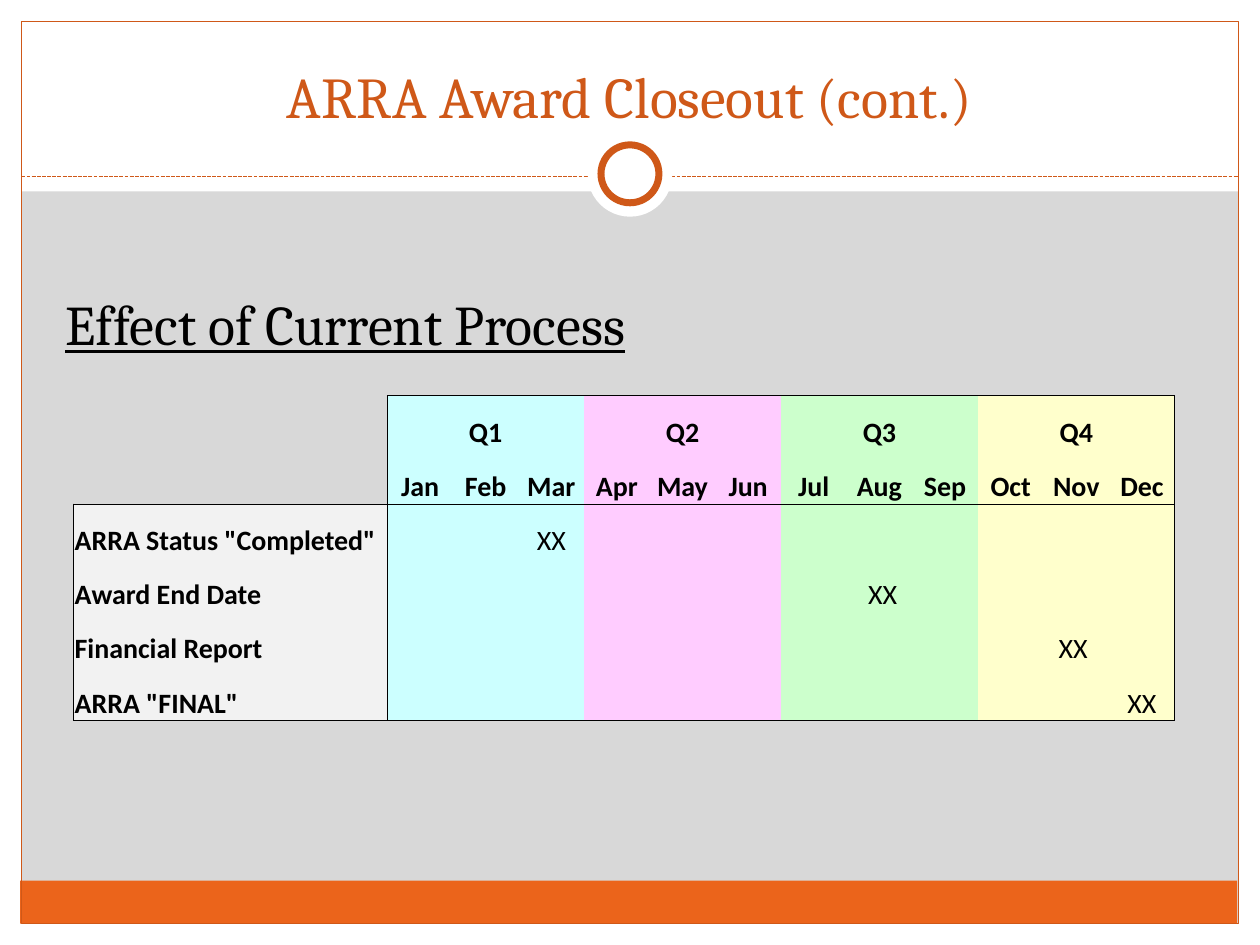
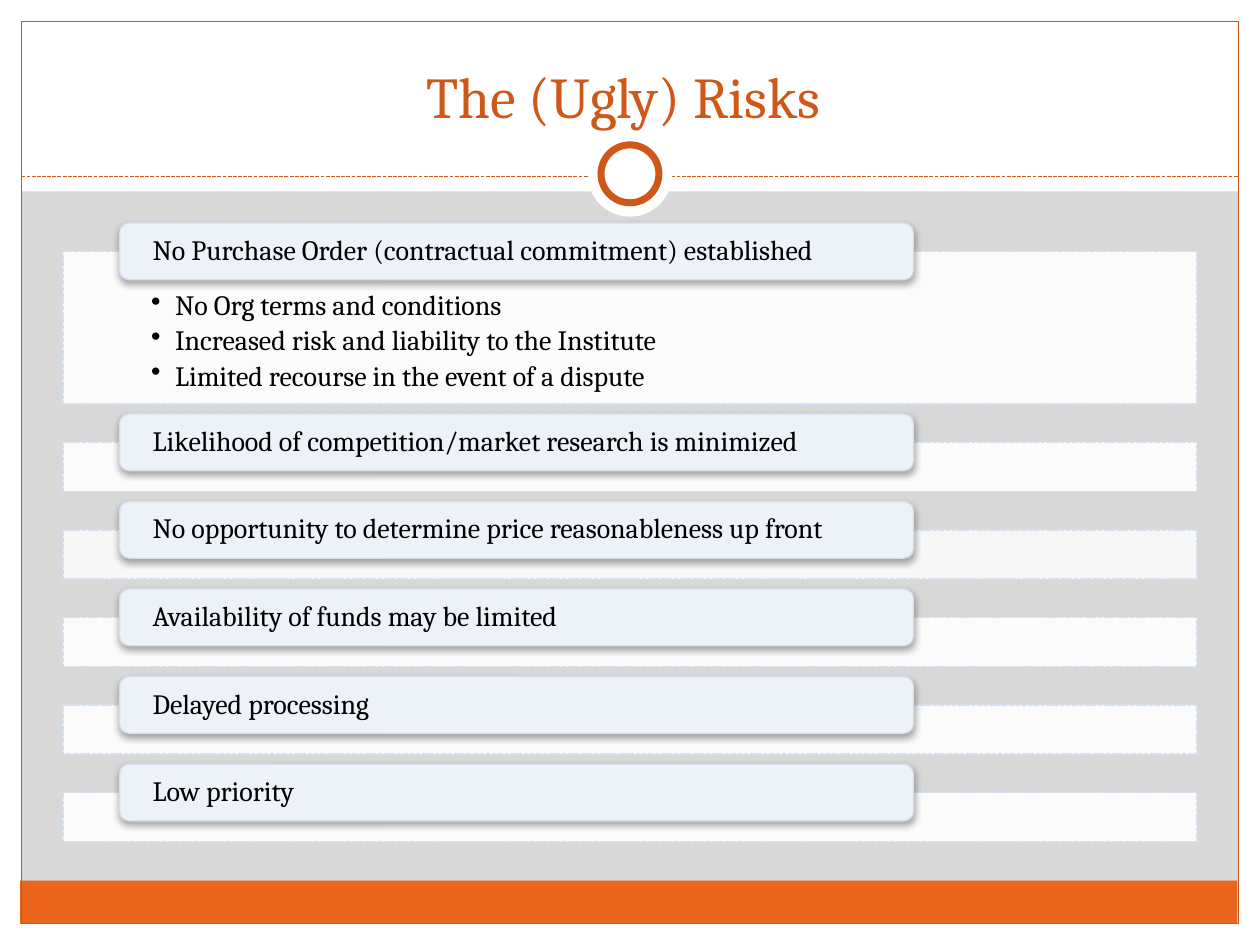
from lxml import etree
from pptx import Presentation
from pptx.dml.color import RGBColor
from pptx.enum.dml import MSO_LINE
from pptx.enum.shapes import MSO_CONNECTOR, MSO_SHAPE
from pptx.enum.text import MSO_ANCHOR, PP_ALIGN
from pptx.oxml.ns import qn
from pptx.util import Inches, Pt

RECTANGLE, ELLIPSE = MSO_SHAPE.RECTANGLE, MSO_SHAPE.OVAL
ROUNDED, STRAIGHT = MSO_SHAPE.ROUNDED_RECTANGLE, MSO_CONNECTOR.STRAIGHT
DASHED = MSO_LINE.SQUARE_DOT
TOP, MIDDLE, BOTTOM = MSO_ANCHOR.TOP, MSO_ANCHOR.MIDDLE, MSO_ANCHOR.BOTTOM
LEFT, CENTER = PP_ALIGN.LEFT, PP_ALIGN.CENTER

BLACK = RGBColor(0x00, 0x00, 0x00)
WHITE = RGBColor(0xFF, 0xFF, 0xFF)
GREY = RGBColor(0xD8, 0xD8, 0xD8)
PALE_GREY = RGBColor(0xF2, 0xF2, 0xF2)
PANEL_GREY = RGBColor(0xF7, 0xF7, 0xF7)
ORANGE = RGBColor(0xEB, 0x64, 0x1B)
RUST = RGBColor(0xCF, 0x58, 0x18)
PALE_BLUE = RGBColor(0xED, 0xF1, 0xF8)
EDGE_BLUE = RGBColor(0xD3, 0xDF, 0xEF)
QUARTER_FILLS = [
    RGBColor(0xCC, 0xFF, 0xFF),
    RGBColor(0xFF, 0xCC, 0xFF),
    RGBColor(0xCC, 0xFF, 0xCC),
    RGBColor(0xFF, 0xFF, 0xCC),
]

deck = Presentation()
deck.slide_width, deck.slide_height = Inches(10), Inches(7.5)
COLUMN = deck.slide_width / 100
ROW = deck.slide_height / 75


def place(page, kind, area, fill=None, line=None, weight=0.75):
    left, top, width, height = area
    box = page.shapes.add_shape(
        kind, int(left * COLUMN), int(top * ROW), int(width * COLUMN), int(height * ROW)
    )
    box.shadow.inherit = False
    if fill is None:
        box.fill.background()
    else:
        box.fill.solid()
        box.fill.fore_color.rgb = fill
    if line is None:
        box.line.fill.background()
    else:
        box.line.color.rgb = line
        box.line.width = Pt(weight)
    return box


def write(frame, lines, color, frame_format, para_format, font_format):
    for name, value in frame_format.items():
        setattr(frame, name, value)
    for index, spans in enumerate(lines):
        para = frame.add_paragraph() if index else frame.paragraphs[0]
        for name, value in para_format.items():
            setattr(para, name, value)
        for text, size in spans:
            span = para.add_run()
            span.text = text
            span.font.size = Pt(size)
            span.font.color.rgb = color
            for name, value in font_format.items():
                setattr(span.font, name, value)


CAMBRIA = {"name": "Cambria"}
BANDS = [
    ((0, 73.3, 100, 1.7), WHITE),
    ((0, 0, 100, 15.2), WHITE),
    ((0, 0, 1.7, 75), WHITE),
    ((98.3, 0, 1.7, 75), WHITE),
    ((1.6, 69.9, 96.6, 3.4), ORANGE),
]
TITLES = [
    [("ARRA Award Closeout", 33), (" (cont.)", 32)],
    [("The (Ugly) Risks ", 33)],
]
pages = []
for title in TITLES:
    page = deck.slides.add_slide(deck.slide_layouts[6])
    page.background.fill.solid()
    page.background.fill.fore_color.rgb = GREY
    for area, fill in BANDS:
        place(page, RECTANGLE, area, fill)
    place(page, RECTANGLE, (1.7, 1.7, 96.6, 71.6), None, RUST)
    rule = page.shapes.add_connector(
        STRAIGHT, int(1.7 * COLUMN), int(14 * ROW), int(98.3 * COLUMN), int(14 * ROW)
    )
    rule.line.color.rgb = RUST
    rule.line.width = Pt(0.75)
    rule.line.dash_style = DASHED
    etree.SubElement(rule._element.spPr, qn("a:effectLst"))
    place(page, ELLIPSE, (46.65, 10.5, 6.7, 6.7), WHITE)
    place(page, ELLIPSE, (47.7, 11.5, 4.6, 4.6), WHITE, RUST, 4)
    heading = page.shapes.add_textbox(
        int(3.3 * COLUMN), int(2.5 * ROW), int(93.3 * COLUMN), int(8.3 * ROW)
    )
    write(heading.text_frame, [title], RUST,
          {"word_wrap": True, "vertical_anchor": BOTTOM}, {"alignment": CENTER}, CAMBRIA)
    pages.append(page)

schedule_page, risk_page = pages

MONTHS = ["Jan", "Feb", "Mar", "Apr", "May", "Jun",
          "Jul", "Aug", "Sep", "Oct", "Nov", "Dec"]
MILESTONES = [
    ('ARRA Status "Completed"', "Mar", "XX"),
    ("Award End Date", "Aug", " XX"),
    ("Financial Report", "Nov", "XX "),
    ('ARRA "FINAL"', "Dec", "XX"),
]
texts = {(0, 3 * quarter + 2): f"Q{quarter + 1}" for quarter in range(4)}
texts.update({(1, column): month for column, month in enumerate(MONTHS, 1)})
for row, (milestone, month, mark) in enumerate(MILESTONES, 2):
    texts[row, 0] = milestone
    texts[row, MONTHS.index(month) + 1] = mark

row_count, column_count = len(MILESTONES) + 2, len(MONTHS) + 1
schedule = schedule_page.shapes.add_table(
    row_count, column_count,
    int(5.83 * COLUMN), int(31.4 * ROW), int(87.5 * COLUMN), int(25.8 * ROW)
).table
schedule.first_row = schedule.horz_banding = False
for index, column in enumerate(schedule.columns):
    column.width = int((5.21 if index else 24.9) * COLUMN)
for row in schedule.rows:
    row.height = int(4.3 * ROW)

CELL_FORMAT = {
    "margin_left": Inches(0.01), "margin_right": Inches(0.01),
    "margin_top": Inches(0.01), "margin_bottom": 0, "vertical_anchor": BOTTOM,
}
for row in range(row_count):
    for column in range(column_count):
        cell = schedule.cell(row, column)
        for name, value in CELL_FORMAT.items():
            setattr(cell, name, value)
        borders = {
            "a:lnL": column == 1 or (column == 0 and row > 1),
            "a:lnR": column in (0, column_count - 1),
            "a:lnT": row == 2 or (row == 0 and column > 0),
            "a:lnB": row in (1, row_count - 1),
        }
        for side, visible in borders.items():
            edge = etree.SubElement(cell._tc.get_or_add_tcPr(), qn(side), w=str(Pt(0.5)))
            if visible:
                ink = etree.SubElement(edge, qn("a:solidFill"))
                etree.SubElement(ink, qn("a:srgbClr"), val=str(BLACK))
            else:
                etree.SubElement(edge, qn("a:noFill"))
        if column or row > 1:
            cell.fill.solid()
            cell.fill.fore_color.rgb = QUARTER_FILLS[(column - 1) // 3] if column else PALE_GREY
        else:
            cell.fill.background()
        if (row, column) in texts:
            write(cell.text_frame, [[(texts[row, column], 16)]], BLACK, {},
                  {"alignment": CENTER if column else LEFT},
                  {"name": "Calibri", "bold": row < 2 or column == 0})

subtitle = schedule_page.shapes.add_textbox(
    int(4.2 * COLUMN), int(22.5 * ROW), int(46.7 * COLUMN), int(6.4 * ROW)
)
write(subtitle.text_frame, [[("Effect of Current Process", 32)]], BLACK,
      {"word_wrap": False}, {}, {**CAMBRIA, "underline": True})

RISKS = [
    ("No Purchase Order (contractual commitment) established", [
        "No Org terms and conditions",
        "Increased risk and liability to the Institute",
        "Limited recourse in the event of a dispute",
    ]),
    ("Likelihood of competition/market research is minimized", []),
    ("No opportunity to determine price reasonableness up front", []),
    ("Availability of funds may be limited", []),
    ("Delayed processing", []),
    ("Low priority", []),
]
OPAQUE_RISK = 2
LABEL_HEIGHT, PANEL_GAP = 4.5, 0.8
PANEL_FORMAT = {
    "word_wrap": True, "vertical_anchor": TOP,
    "margin_left": Inches(0.7), "margin_right": Inches(0.7),
    "margin_top": Inches(0.32), "margin_bottom": Inches(0.12),
}
LABEL_FORMAT = {
    "word_wrap": True, "vertical_anchor": MIDDLE,
    "margin_left": Inches(0.24), "margin_right": Inches(0.24),
    "margin_top": 0, "margin_bottom": 0,
}
label_top = 17.7
for index, (risk, details) in enumerate(RISKS):
    panel_top = label_top + LABEL_HEIGHT / 2
    panel_height = 12.1 if details else 3.9
    opaque = index == OPAQUE_RISK
    panel = place(risk_page, RECTANGLE, (5, panel_top, 90, panel_height),
                  PANEL_GREY if opaque else WHITE, EDGE_BLUE, 0.9)
    panel.line.dash_style = DASHED
    if not opaque:
        tint = panel._element.spPr.find(qn("a:solidFill"))[0]
        etree.SubElement(tint, qn("a:alpha"), val="90000")
    if details:
        write(panel.text_frame, [[(detail, 16)] for detail in details], BLACK, PANEL_FORMAT,
              {"alignment": LEFT, "line_spacing": 0.9, "space_after": Pt(2.8)}, CAMBRIA)
        for para in panel.text_frame.paragraphs:
            layout = para._p.get_or_add_pPr()
            layout.set("marL", str(Inches(0.19)))
            layout.set("indent", str(-Inches(0.19)))
            etree.SubElement(layout, qn("a:buChar"), char="•")

    label = place(risk_page, ROUNDED, (9.5, label_top, 63, LABEL_HEIGHT), PALE_BLUE, EDGE_BLUE)
    write(label.text_frame, [[(risk, 16)]], BLACK, LABEL_FORMAT,
          {"alignment": LEFT, "line_spacing": 0.9}, CAMBRIA)
    shade = etree.SubElement(
        label._element.spPr.find(qn("a:effectLst")), qn("a:outerShdw"),
        blurRad=str(Pt(4)), dist=str(Pt(2)), dir="5400000", rotWithShape="0"
    )
    shade_color = etree.SubElement(shade, qn("a:srgbClr"), val=str(BLACK))
    etree.SubElement(shade_color, qn("a:alpha"), val="35000")
    label_top = panel_top + panel_height + PANEL_GAP

deck.save("out.pptx")
